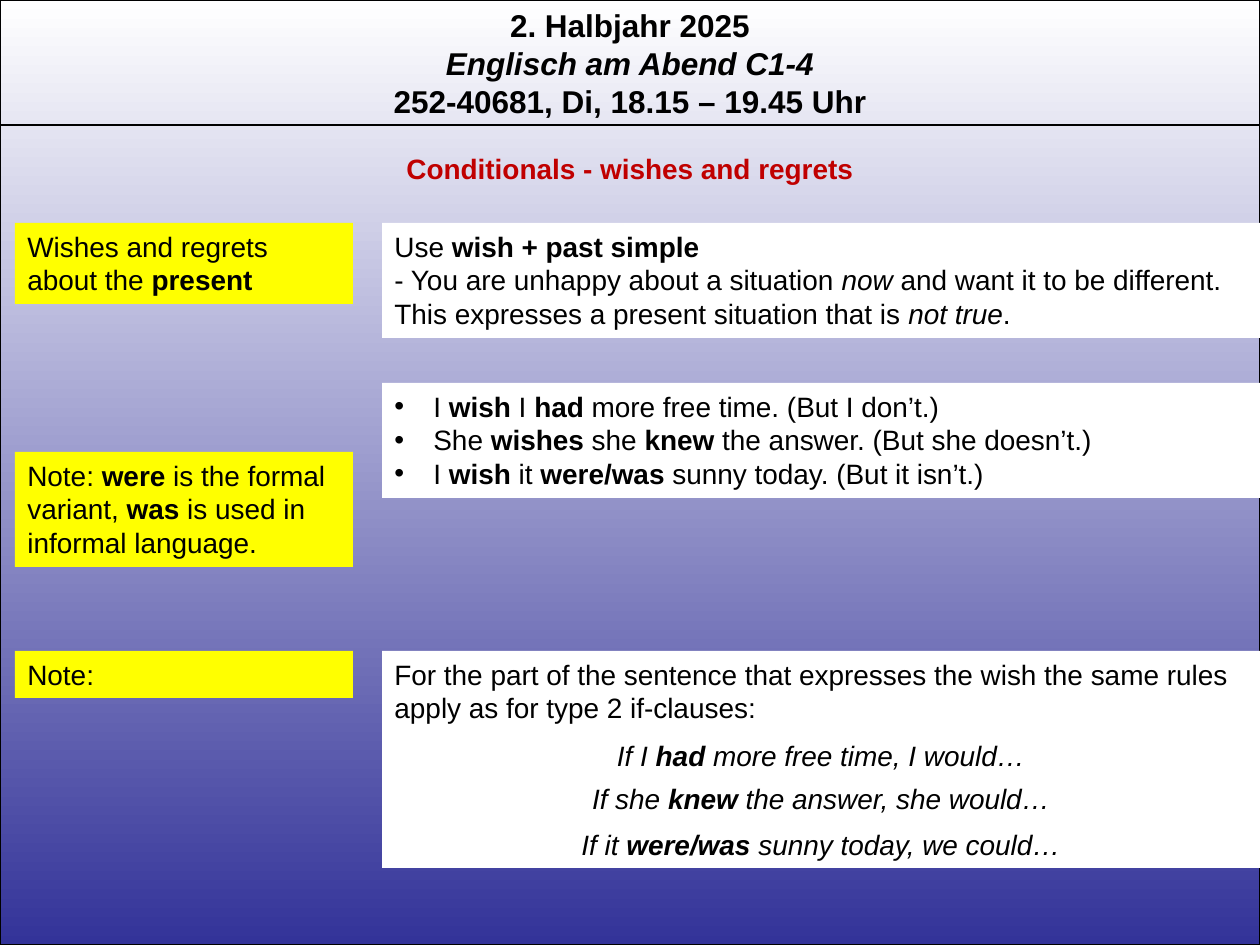
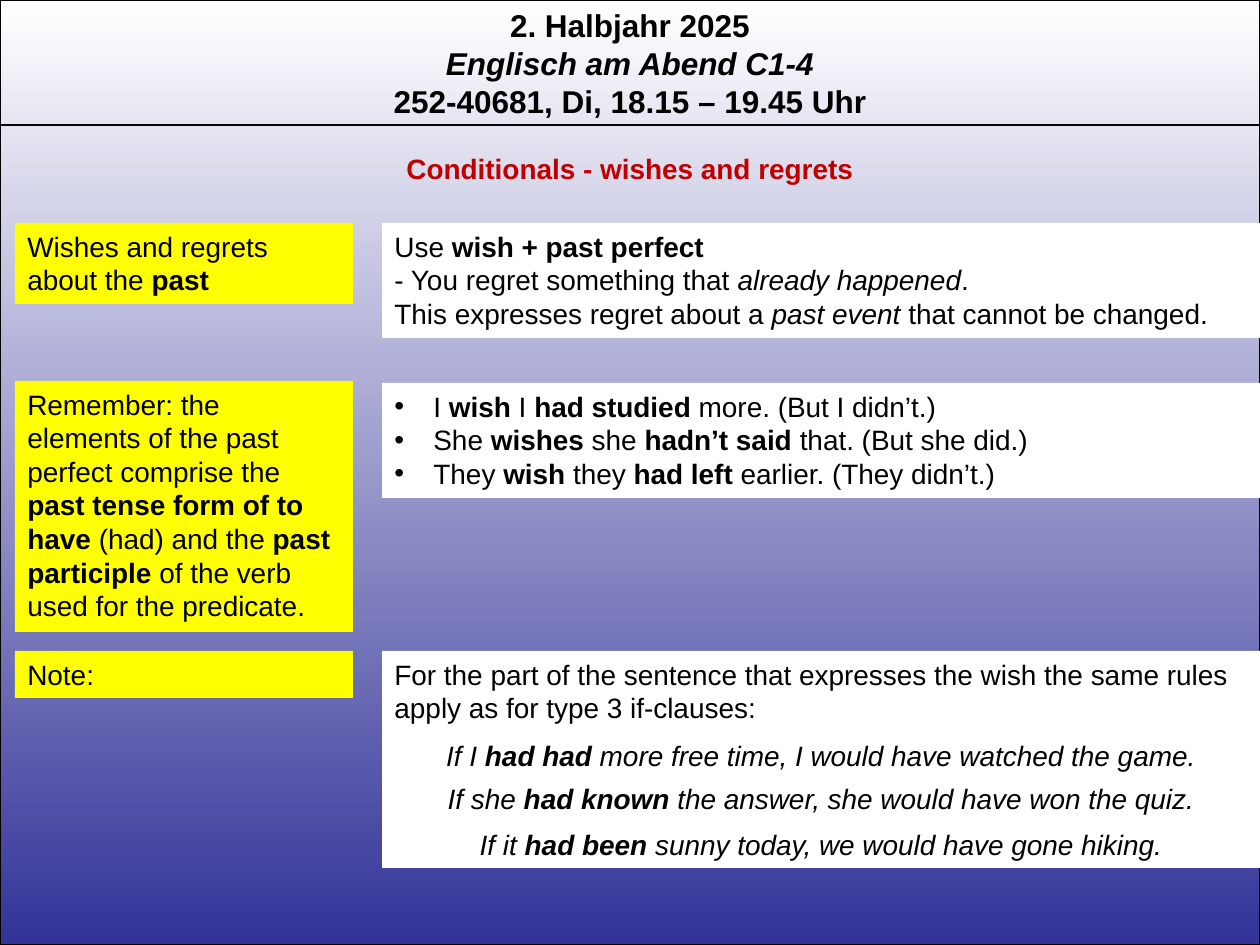
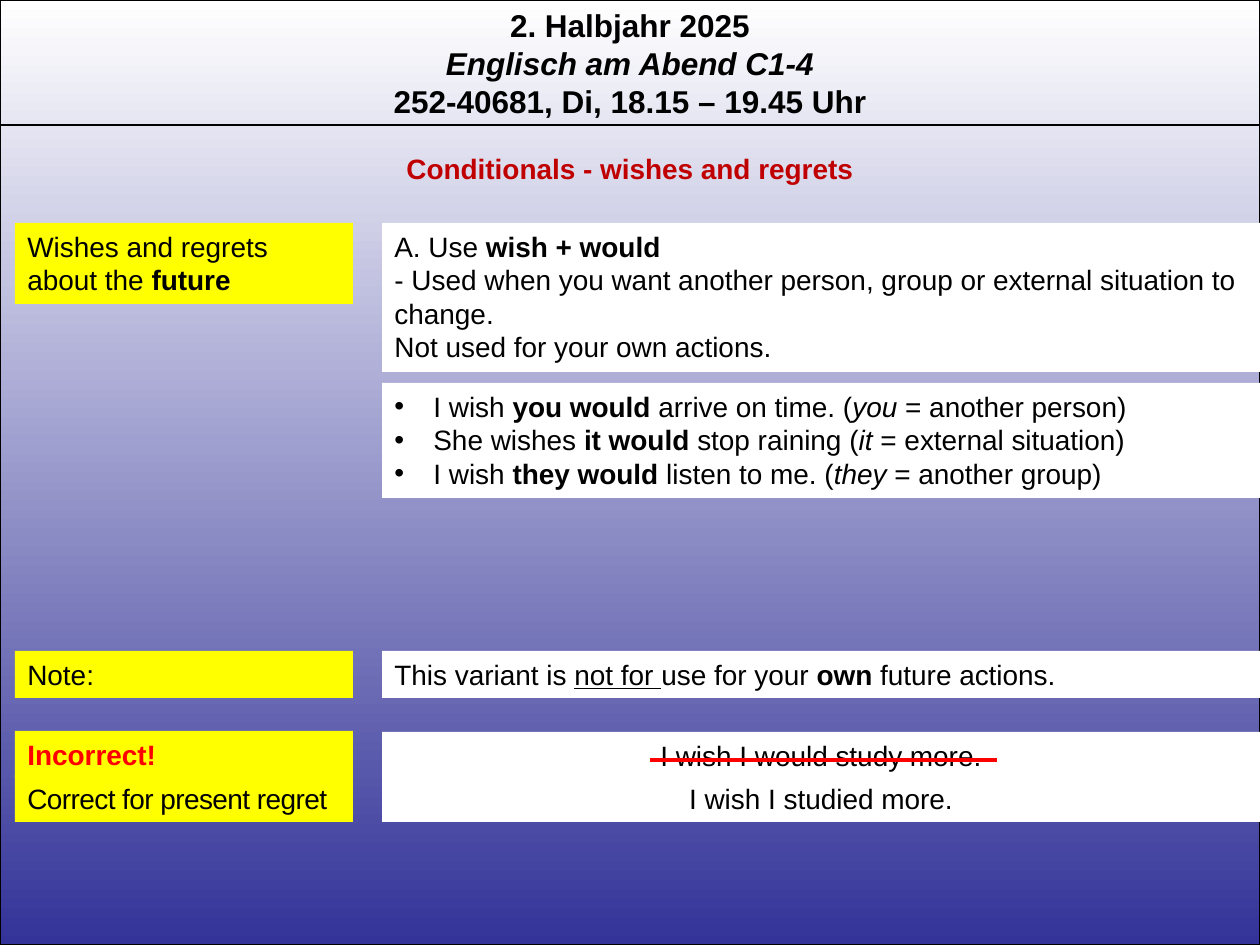
from lxml import etree
from pptx import Presentation
from pptx.dml.color import RGBColor
from pptx.enum.shapes import MSO_CONNECTOR, MSO_SHAPE
from pptx.enum.text import MSO_ANCHOR, MSO_AUTO_SIZE, PP_ALIGN
from pptx.oxml.ns import qn
from pptx.util import Emu, Pt

RECT = MSO_SHAPE.RECTANGLE
STRAIGHT = MSO_CONNECTOR.STRAIGHT
TOP = MSO_ANCHOR.TOP
GROW = MSO_AUTO_SIZE.SHAPE_TO_FIT_TEXT
LEFT, CENTER = PP_ALIGN.LEFT, PP_ALIGN.CENTER

BLACK = RGBColor(0x00, 0x00, 0x00)
WHITE = RGBColor(0xFF, 0xFF, 0xFF)
INDIGO = RGBColor(0x33, 0x33, 0x99)
YELLOW = RGBColor(0xFF, 0xFF, 0x00)
DARK_RED = RGBColor(0xC0, 0x00, 0x00)
RED = RGBColor(0xFF, 0x00, 0x00)

FONT = "Arial"
WIDTH, HEIGHT = 1260, 945
LABEL_X, LABEL_W = 15, 338
BODY_X, BODY_W = 382, 878
RULE_Y, EXAMPLES_Y, NOTE_Y = 223, 383, 651
SENTENCES_Y = (732, 775, 821)
BULLET_INDENT = 39
MARKS = {"*": "bold", "~": "italic", "_": "underline"}


def px(n):
    return Emu(round(n * 914400 / 126))


def split_runs(text):
    """Yield (text, format) pairs; each mark in MARKS switches its format."""
    fmt, part = dict.fromkeys(MARKS.values(), False), ""
    for ch in text:
        if ch in MARKS:
            if part:
                yield part, dict(fmt)
            fmt[MARKS[ch]] = not fmt[MARKS[ch]]
            part = ""
        else:
            part += ch
    if part:
        yield part, fmt


class Deck:
    def __init__(self):
        self.prs = Presentation()
        self.prs.slide_width, self.prs.slide_height = px(WIDTH), px(HEIGHT)
        self.s = None

    def new_slide(self):
        self.s = self.prs.slides.add_slide(self.prs.slide_layouts[6])
        self.backdrop()
        self.text(0, 0, WIDTH, 127,
                  ["*2. Halbjahr 2025*", "*~Englisch am Abend C1-4~*",
                   "*252-40681, Di, 18.15 – 19.45 Uhr*"],
                  size=18, align=CENTER)
        self.line(0, WIDTH, 125, BLACK, 0.75)
        self.text(0, 145, WIDTH, 47, ["*Conditionals - wishes and regrets*"],
                  color=DARK_RED, align=CENTER)

    def backdrop(self):
        sp = self.s.shapes.add_shape(RECT, 0, 0, px(WIDTH), px(HEIGHT))
        sp.shadow.inherit = False
        sp.fill.gradient()
        sp.fill.gradient_angle = 270
        for stop, color in zip(sp.fill.gradient_stops, (WHITE, INDIGO)):
            stop.color.rgb = color
        sp.line.color.rgb = BLACK
        sp.line.width = Pt(0.75)

    def line(self, x1, x2, y, color, width):
        cn = self.s.shapes.add_connector(STRAIGHT, px(x1), px(y), px(x2), px(y))
        cn.line.color.rgb = color
        cn.line.width = Pt(width)
        etree.SubElement(cn._element.spPr, qn("a:effectLst"))

    def text(self, x, y, w, h, paras, fill=None, size=16, color=BLACK,
             align=LEFT, bullets=False, spacing=0):
        box = px(x), px(y), px(w), px(h)
        if fill is None:
            sp = self.s.shapes.add_textbox(*box)
        else:
            sp = self.s.shapes.add_shape(RECT, *box)
            sp.shadow.inherit = False
            sp.fill.solid()
            sp.fill.fore_color.rgb = fill
            sp.line.fill.background()
        tf = sp.text_frame
        for name, value in dict(word_wrap=True, auto_size=GROW,
                                vertical_anchor=TOP).items():
            setattr(tf, name, value)
        for i, para in enumerate(paras):
            p = tf.add_paragraph() if i else tf.paragraphs[0]
            p.alignment = align
            if bullets:
                self.bullet(p)
            for part, fmt in split_runs(para):
                r = p.add_run()
                r.text = part
                for name, value in dict(fmt, name=FONT, size=Pt(size)).items():
                    setattr(r.font, name, value)
                r.font.color.rgb = color
                if spacing:
                    r._r.get_or_add_rPr().set("spc", str(spacing))

    def bullet(self, p):
        pPr = p._p.get_or_add_pPr()
        pPr.set("marL", str(px(BULLET_INDENT)))
        pPr.set("indent", str(px(-BULLET_INDENT)))
        etree.SubElement(pPr, qn("a:buFont"), typeface=FONT)
        etree.SubElement(pPr, qn("a:buChar"), char="•")

    def label(self, y, text, rows=1, **style):
        self.text(LABEL_X, y, LABEL_W, 13 + 34 * rows, [text], YELLOW, **style)

    def body(self, y, paras, rows=1, **style):
        self.text(BODY_X, y, BODY_W, 13 + 34 * rows, paras, WHITE, **style)

    def topic(self, time, rule, examples, rows=3):
        """Start a slide with its time label, rule and bulleted examples."""
        self.new_slide()
        self.label(RULE_Y, f"Wishes and regrets about the *{time}*", 2)
        self.body(RULE_Y, rule, rows)
        self.body(EXAMPLES_Y, examples, 3, bullets=True)
        self.label(NOTE_Y, "Note:")

    def if_clauses(self, kind, sentences):
        self.body(NOTE_Y, ["For the part of the sentence that expresses the wish "
                           f"the same rules apply as for type {kind} if-clauses:"], 2)
        self.sentences([f"~{sentence}~" for sentence in sentences])

    def sentences(self, sentences):
        for y, sentence in zip(SENTENCES_Y, sentences):
            self.body(y, [sentence], align=CENTER)


def present(deck):
    deck.topic("present",
               ["Use *wish + past simple*",
                "- You are unhappy about a situation ~now~ and want it to be different.",
                "This expresses a present situation that is ~not true~."],
               ["I *wish* I *had* more free time. (But I don’t.)",
                "She *wishes* she *knew *the answer. (But she doesn’t.)",
                "I *wish* it *were/was *sunny today. (But it isn’t.)"])
    deck.label(452, "Note: *were* is the formal variant, *was* is used in "
                    "informal language.", 3)
    deck.if_clauses(2, ["If I *had* more free time, I would…",
                        "If she *knew* the answer, she would…",
                        "If it *were/was *sunny today, we could…"])


def past(deck):
    deck.topic("past",
               ["Use *wish + past perfect*",
                "- You regret something that ~already happened~.",
                "This expresses regret about a ~past event ~that cannot be changed."],
               ["I *wish* I *had studied* more. (But I didn’t.)",
                "She *wishes* she *hadn’t said *that. (But she did.)",
                "They *wish* they *had left *earlier. (They didn’t.)"])
    deck.label(381, "Remember: the elements of the past perfect comprise the "
                    "*past tense form of to have *(had) and the *past participle *"
                    "of the verb used for the predicate.", 7)
    deck.if_clauses(3, ["If I *had had* more free time, I would have watched the game.",
                        "If she *had known* the answer, she would have won the quiz.",
                        "If it *had been *sunny today, we would have gone hiking."])


def future(deck):
    deck.topic("future",
               ["A. Use *wish + would*",
                "- Used when you want another person, group or external "
                "situation to change.",
                "Not used for your own actions."],
               ["I wish *you would *arrive on time. (~you~ = another person)",
                "She wishes *it would *stop raining (~it~ = external situation)",
                "I wish *they would *listen to me. (~they~ = another group)"],
               rows=4)
    deck.body(NOTE_Y, ["This variant is _not for _use for your *own *future actions."])
    wrong_y, right_y = SENTENCES_Y[:2]
    deck.label(wrong_y - 1, "*Incorrect!*", color=RED)
    deck.label(right_y, "Correct for present regret", spacing=-30)
    deck.sentences(["I wish I would study more.", "I wish I studied more."])
    deck.line(650, 997, 760, RED, 2.25)


def main():
    deck = Deck()
    for build in (present, past, future):
        build(deck)
    deck.prs.save("out.pptx")


if __name__ == "__main__":
    main()
